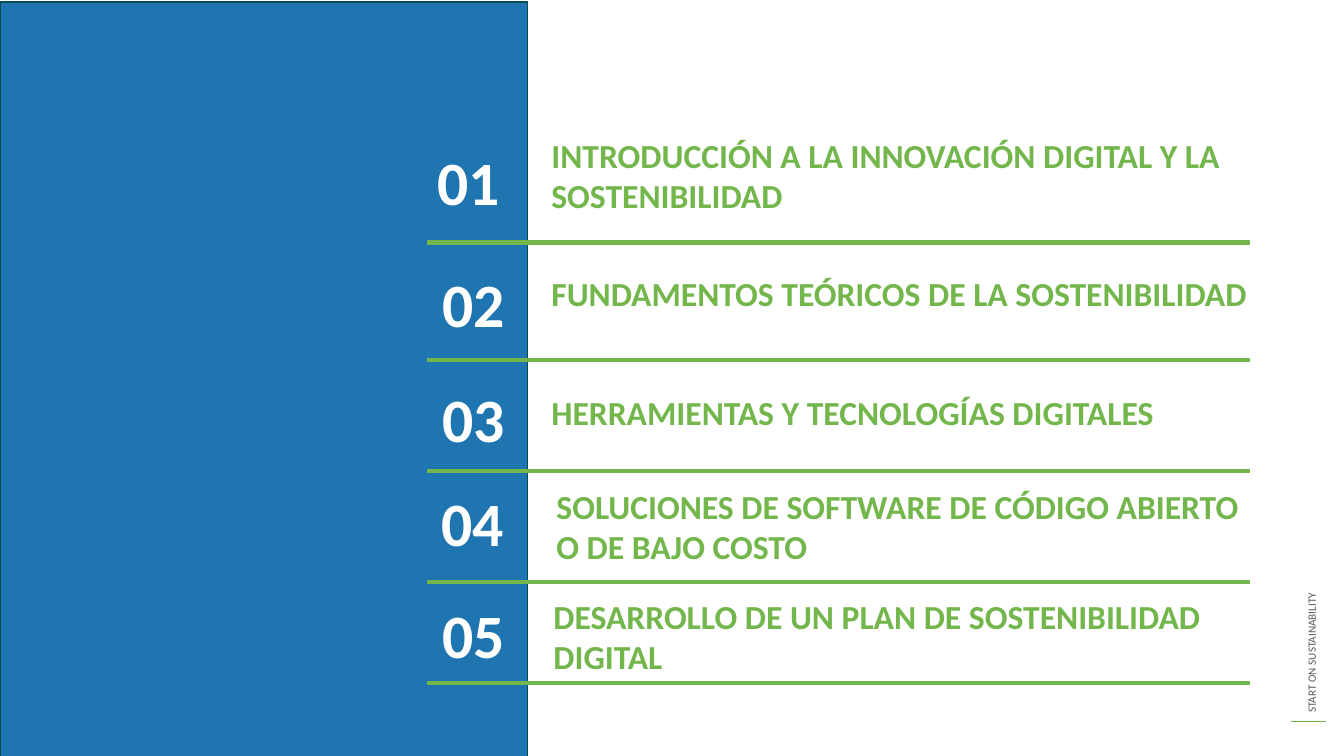
import pptx
import pptx.dml.color
import pptx.enum.shapes
import pptx.enum.text
import pptx.oxml.ns
import pptx.util
from lxml import etree

PX = 9144
GREEN, BLUE, DARK, WHITE, GREY = "73B64B", "1E75B0", "054F50", "FFFFFF", "595959"
NUMBER_WIDTH, NUMBER_HEIGHT = 135, 105
TITLE_WIDTH = 718
RULE_LEFT, RULE_WIDTH, RULE_HEIGHT = 424, 815, 3

CHAPTERS = [
    ("INTRODUCCIÓN A LA INNOVACIÓN DIGITAL Y LA SOSTENIBILIDAD", (537, 129, 104), (424, 116), 239),
    ("FUNDAMENTOS TEÓRICOS DE LA SOSTENIBILIDAD", (537, 266, 37), (429, 237), 356),
    ("HERRAMIENTAS Y TECNOLOGÍAS DIGITALES", (537, 384, 37), (429, 351), 466),
    ("SOLUCIONES DE SOFTWARE DE CÓDIGO ABIERTO O DE BAJO COSTO", (542, 477, 37), (428, 454), 576),
    ("DESARROLLO DE UN PLAN DE SOSTENIBILIDAD DIGITAL", (539, 586, 52), (429, 565), 676),
]


def px(*lengths):
    """Turn px lengths into EMU."""
    return [pptx.util.Emu(length * PX) for length in lengths]


def colour(hex_code):
    """Return the colour for a hex string."""
    return pptx.dml.color.RGBColor.from_string(hex_code)


def add_block(page, bounds, fill, line):
    """Draw a filled rectangle with a one-point outline."""
    block = page.shapes.add_shape(pptx.enum.shapes.MSO_SHAPE.RECTANGLE, *px(*bounds))
    block.shadow.inherit = False
    block.fill.solid()
    block.fill.fore_color.rgb = colour(fill)
    block.line.color.rgb = colour(line)
    block.line.width = pptx.util.Pt(1)


def add_text(page, bounds, text, size, ink, bold=True, spacing=1.0, rotation=0):
    """Write one paragraph in a wrapping text box."""
    box = page.shapes.add_textbox(*px(*bounds))
    box.rotation = rotation
    box.text_frame.word_wrap = True
    box.text_frame.vertical_anchor = pptx.enum.text.MSO_ANCHOR.TOP
    para = box.text_frame.paragraphs[0]
    para.line_spacing = spacing
    span = para.add_run()
    span.text = text
    span.font.color.rgb = colour(ink)
    style = {"name": "Calibri", "size": pptx.util.Pt(size), "bold": bold}
    for name, value in style.items():
        setattr(span.font, name, value)


def add_line(page, ends, ink):
    """Draw a thin straight line without a shadow."""
    line = page.shapes.add_connector(pptx.enum.shapes.MSO_CONNECTOR.STRAIGHT, *px(*ends))
    line.line.color.rgb = colour(ink)
    line.line.width = pptx.util.Pt(1)
    properties = line._element.find(pptx.oxml.ns.qn("p:spPr"))
    etree.SubElement(properties, pptx.oxml.ns.qn("a:effectLst"))


def add_chapter(page, number, title, title_place, number_place, rule_top):
    """Place a chapter's title, number and rule."""
    left, top, height = title_place
    add_text(page, (left, top, TITLE_WIDTH, height), title, 24, GREEN)
    add_text(page, (*number_place, NUMBER_WIDTH, NUMBER_HEIGHT), f"{number:02}", 44, WHITE, spacing=1.3)
    add_block(page, (RULE_LEFT, rule_top, RULE_WIDTH, RULE_HEIGHT), GREEN, GREEN)


def main():
    """Build the contents slide."""
    deck = pptx.Presentation()
    deck.slide_width, deck.slide_height = px(1333, 750)
    page = deck.slides.add_slide(deck.slide_layouts[6])
    add_text(page, (1078, 482, 446, 24), "START ON SUSTAINABILITY", 8, GREY, bold=False, rotation=270)
    add_line(page, (1280, 716, 1315, 716), GREEN)
    add_block(page, (0, 2, 523, 750), BLUE, DARK)
    for number, chapter in enumerate(CHAPTERS, start=1):
        add_chapter(page, number, *chapter)
    deck.save("out.pptx")


if __name__ == "__main__":
    main()
